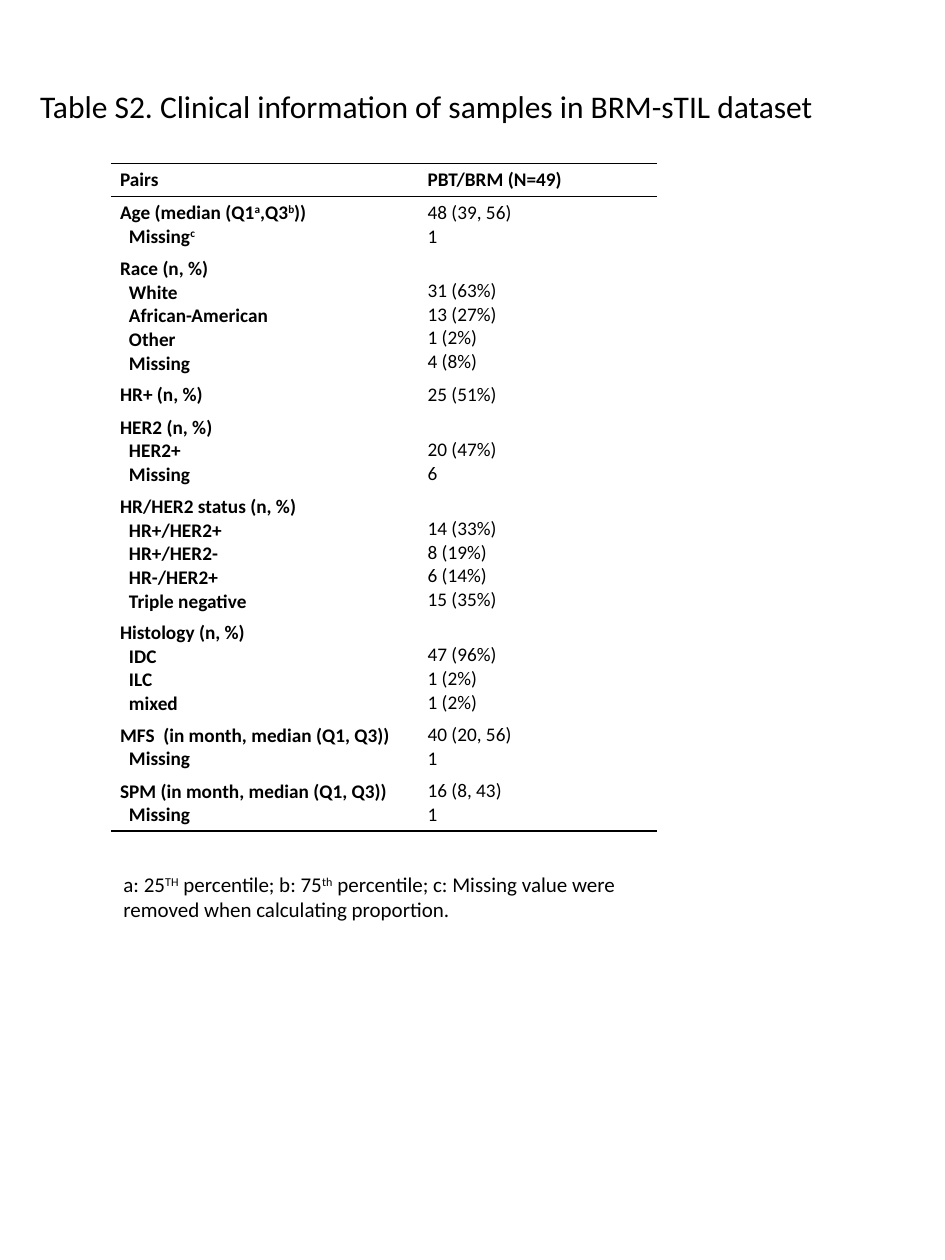
from lxml.etree import SubElement
from pptx import Presentation
from pptx.dml.color import RGBColor
from pptx.enum.text import MSO_ANCHOR, MSO_AUTO_SIZE
from pptx.oxml.ns import qn
from pptx.util import Cm, Pt

COLORS = {"ink": "000000", "paper": "FFFFFF"}
FONT = "Calibri"
NO_GRID_STYLE = "{2D5ABB26-0587-4C30-8999-92F81FD0307C}"

TITLE = "Table S2. Clinical information of samples in BRM-sTIL dataset"
# Text between carets is superscript
FOOTNOTE = ("a: 25^TH^ percentile; b: 75^th^ percentile; c: Missing value were "
            "removed when calculating proportion.")

# Each group: labels (the first is the heading) and values, aligned at the bottom
HEADER = (["Pairs"], ["PBT/BRM (N=49)"])
GROUPS = [
    (["Age (median (Q1^a^,Q3^b^))", "Missing^c^"], ["48 (39, 56)", "1"]),
    (["Race (n, %)", "White", "African-American", "Other", "Missing"],
     ["31 (63%)", "13 (27%)", "1 (2%)", "4 (8%)"]),
    (["HR+ (n, %)"], ["25 (51%)"]),
    (["HER2 (n, %)", "HER2+", "Missing"], ["20 (47%)", "6"]),
    (["HR/HER2 status (n, %)", "HR+/HER2+", "HR+/HER2-", "HR-/HER2+", "Triple negative"],
     ["14 (33%)", "8 (19%)", "6 (14%)", "15 (35%)"]),
    (["Histology (n, %)", "IDC", "ILC", "mixed"], ["47 (96%)", "1 (2%)", "1 (2%)"]),
    (["MFS  (in month, median (Q1, Q3))", "Missing"], ["40 (20, 56)", "1"]),
    (["SPM (in month, median (Q1, Q3))", "Missing"], ["16 (8, 43)", "1"]),
]


def write_line(paragraph, text, size, bold=False):
    """Fill a paragraph, raising every second caret-separated part."""
    for index, part in enumerate(text.split("^")):
        if not part:
            continue
        run = paragraph.add_run()
        run.text = part
        for name, value in {"name": FONT, "size": Pt(size), "bold": bold}.items():
            setattr(run.font, name, value)
        run.font.color.rgb = RGBColor.from_string(COLORS["ink"])
        if index % 2:
            run._r.get_or_add_rPr().set("baseline", "30000")


def add_caption(slide, box, text, size):
    frame = slide.shapes.add_textbox(*map(Cm, box)).text_frame
    frame.word_wrap = True
    frame.auto_size = MSO_AUTO_SIZE.SHAPE_TO_FIT_TEXT
    write_line(frame.paragraphs[0], text, size)


def add_rule(cell, side):
    """Draw one cell border; borders must precede the cell's fill."""
    properties = cell._tc.get_or_add_tcPr()
    line = SubElement(properties, qn(f"a:{side}"), w=str(Pt(1)))
    fill = SubElement(line, qn("a:solidFill"))
    SubElement(fill, qn("a:srgbClr"), val=COLORS["ink"])


def fill_cell(cell, lines, bold, indent):
    layout = {"margin_left": Cm(0.18), "margin_right": Cm(0.18),
              "margin_top": Cm(0.09), "margin_bottom": Cm(0.09),
              "vertical_anchor": MSO_ANCHOR.TOP if bold else MSO_ANCHOR.BOTTOM}
    for name, value in layout.items():
        setattr(cell, name, value)
    frame = cell.text_frame
    for index, text in enumerate(lines):
        paragraph = frame.add_paragraph() if index else frame.paragraphs[0]
        if index and indent:
            paragraph._p.get_or_add_pPr().set("marL", str(Cm(0.18)))
        write_line(paragraph, text, 11, bold)


def add_clinical_table(slide, left, top, column_widths):
    rows = [HEADER] + GROUPS
    heights = [0.19 + 0.47 * len(labels) for labels, _ in rows]
    table = slide.shapes.add_table(
        len(rows), len(column_widths), Cm(left), Cm(top),
        Cm(sum(column_widths)), Cm(sum(heights))).table
    table.first_row = table.horz_banding = False
    table._tbl.tblPr.find(qn("a:tableStyleId")).text = NO_GRID_STYLE
    for column, width in zip(table.columns, column_widths):
        column.width = Cm(width)

    for r, (row, height) in enumerate(zip(rows, heights)):
        table.rows[r].height = Cm(height)
        for c, lines in enumerate(row):
            cell = table.cell(r, c)
            is_label = c == 0
            fill_cell(cell, lines, bold=is_label or r == 0, indent=is_label)
            # Rules above and below the header, and below the last group
            if r == 0:
                add_rule(cell, "lnT")
            if r in (0, len(rows) - 1):
                add_rule(cell, "lnB")
            cell.fill.background()


def main():
    presentation = Presentation()
    presentation.slide_width = Cm(19.05)
    presentation.slide_height = Cm(25.4)
    slide = presentation.slides.add_slide(presentation.slide_layouts[6])
    background = slide.background.fill
    background.solid()
    background.fore_color.rgb = RGBColor.from_string(COLORS["paper"])

    add_caption(slide, (0.56, 1.63, 16.76, 1.02), TITLE, 18)
    add_clinical_table(slide, 2.24, 3.3, [6.2, 4.8])
    add_caption(slide, (2.24, 17.45, 10.74, 1.27), FOOTNOTE, 12)
    presentation.save("out.pptx")


if __name__ == "__main__":
    main()
